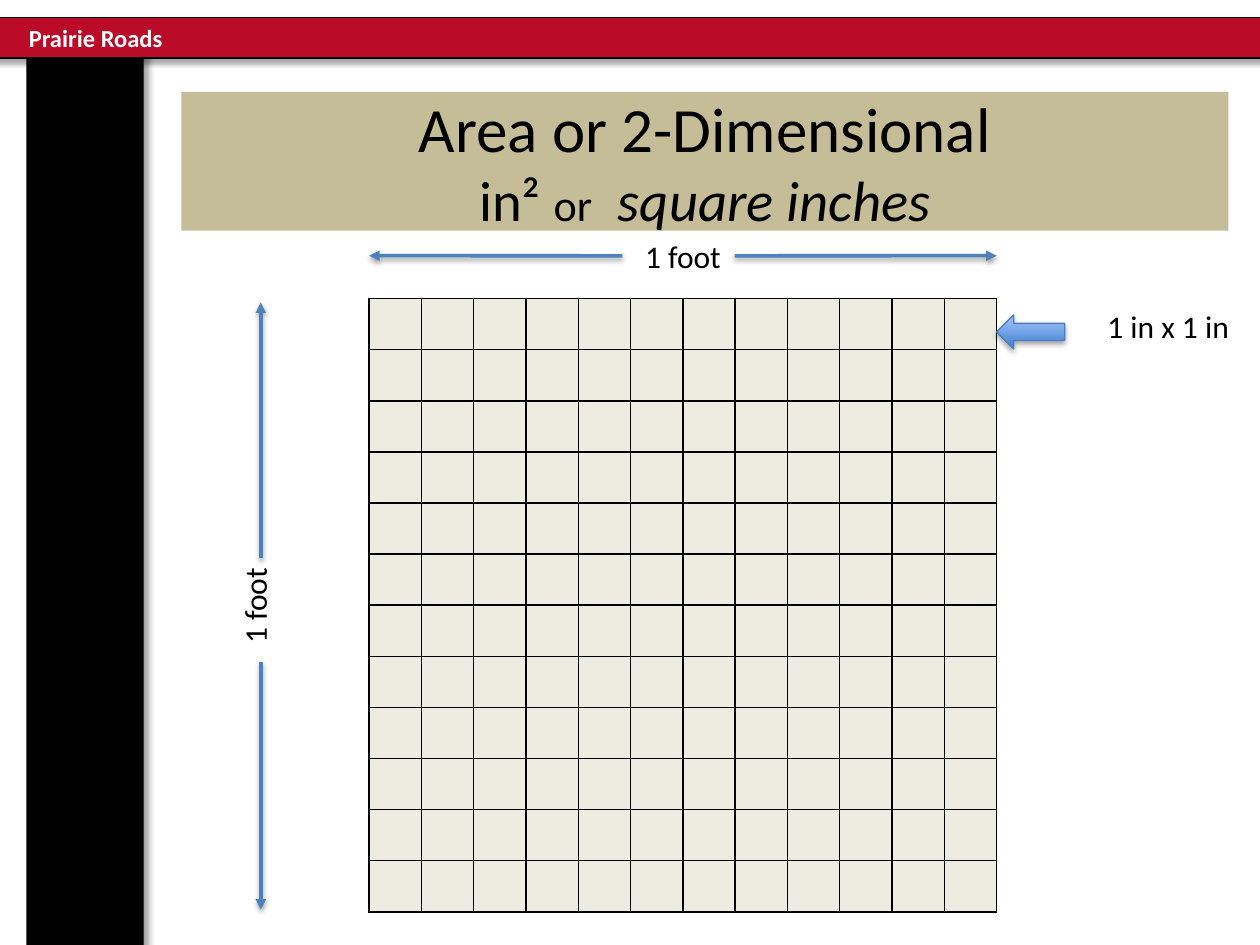
"""Build the slide showing one square foot as a grid of square inches."""
from dataclasses import dataclass

from lxml import etree
from pptx import Presentation
from pptx import util as u
from pptx.dml.color import RGBColor
from pptx.enum import shapes, text
from pptx.oxml import parse_xml
from pptx.oxml.ns import qn

COLORS = {
    "black": "000000", "white": "FFFFFF", "red": "BA0C28", "tan": "C4BD97",
    "cell": "EEECE1", "blue": "4F81BD", "edge": "4B7EBC",
    "dark": "3F80CE", "light": "A4C4FF",
}
NS = "http://schemas.openxmlformats.org/drawingml/2006/main"
WIDTH, HEIGHT = u.Inches(10), u.Inches(7.5)
INCHES_PER_FOOT = 12


@dataclass(frozen=True)
class Box:
    """Hold a frame in percent of the slide's width and height."""
    x: float
    y: float
    w: float
    h: float

    def emu(self) -> tuple:
        return across(self.x), down(self.y), across(self.w), down(self.h)


@dataclass(frozen=True)
class Shadow:
    """Hold an outer shadow: opacity percent, points and degrees."""
    alpha: float
    blur: float
    dist: float
    angle: float


@dataclass(frozen=True)
class Label:
    """Hold a text box and its formatting."""
    box: Box
    words: str
    fmt: dict
    align: text.PP_ALIGN = text.PP_ALIGN.LEFT
    wrap: bool = True
    vert: str = "horz"


@dataclass(frozen=True)
class Measure:
    """Hold an arrow from a point to a connection site of a label."""
    label: int
    x: float
    y: float
    site: int


def across(share: float) -> int:
    """Turn a percentage of the slide's width into a length."""
    return round(WIDTH * share / 100)


def down(share: float) -> int:
    """Turn a percentage of the slide's height into a length."""
    return round(HEIGHT * share / 100)


def rgb(name: str) -> RGBColor:
    """Look up a named colour."""
    return RGBColor.from_string(COLORS[name])


def set_font(r, fmt: dict, color: str = "black") -> None:
    """Apply format values to a run."""
    for key, value in {"name": "Calibri", **fmt}.items():
        setattr(r.font, key, value)
    r.font.color.rgb = rgb(color)


def set_shadow(sp, shadow: Shadow) -> None:
    """Give a shape or connector an outer shadow."""
    effects = etree.SubElement(sp._element.spPr, qn("a:effectLst"))
    outer = etree.SubElement(
        effects, qn("a:outerShdw"), blurRad=str(u.Pt(shadow.blur)),
        dist=str(u.Pt(shadow.dist)), dir=str(shadow.angle * 60000),
        rotWithShape="0")
    color = etree.SubElement(outer, qn("a:srgbClr"), val=COLORS["black"])
    etree.SubElement(color, qn("a:alpha"), val=str(shadow.alpha * 1000))


def add_block(s, kind, box: Box, fill: str, line: str, shadow: Shadow):
    """Draw a filled preset shape with an outline and a shadow."""
    sp = s.shapes.add_shape(kind, *box.emu())
    sp.fill.solid()
    sp.fill.fore_color.rgb = rgb(fill)
    if line:
        sp.line.color.rgb = rgb(line)
        sp.line.width = u.Pt(0.75)
    else:
        sp.line.fill.background()
    set_shadow(sp, shadow)
    return sp


def add_label(s, label: Label, color: str = "black"):
    """Draw a one-line text box."""
    sp = s.shapes.add_textbox(*label.box.emu())
    tf = sp.text_frame
    tf.word_wrap = label.wrap
    tf._txBody.bodyPr.set("vert", label.vert)
    p = tf.paragraphs[0]
    p.alignment = label.align
    r = p.add_run()
    r.text = label.words
    set_font(r, label.fmt, color)
    return sp


def add_title(s, box: Box, lines: list) -> None:
    """Fill the title placeholder with lines of formatted runs."""
    sp = s.shapes.title
    s.shapes._spTree.append(sp._element)
    sp.left, sp.top, sp.width, sp.height = box.emu()
    sp.fill.solid()
    sp.fill.fore_color.rgb = rgb("tan")
    tf = sp.text_frame
    frame = {"word_wrap": True, "auto_size": text.MSO_AUTO_SIZE.NONE,
             "vertical_anchor": text.MSO_ANCHOR.MIDDLE}
    for key, value in frame.items():
        setattr(tf, key, value)
    p = tf.paragraphs[0]
    p.alignment = text.PP_ALIGN.CENTER
    for i, runs in enumerate(lines):
        if i:
            p.add_line_break()
        for words, size, italic in runs:
            r = p.add_run()
            r.text = words
            set_font(r, {"size": u.Pt(size), "italic": italic})


def add_grid(s, box: Box, count: int) -> None:
    """Draw a square table of equal bordered cells."""
    table = s.shapes.add_table(count, count, *box.emu()).table
    table.first_row = table.horz_banding = False
    for col in table.columns:
        col.width = across(box.w / count)
    for row in table.rows:
        row.height = down(box.h / count)
    for cell in table.iter_cells():
        cell.fill.solid()
        cell.fill.fore_color.rgb = rgb("cell")
        for i, side in enumerate(("lnL", "lnR", "lnT", "lnB")):
            cell._tc.tcPr.insert(i, parse_xml(
                f'<a:{side} xmlns:a="{NS}" w="{u.Pt(1)}"><a:solidFill>'
                f'<a:srgbClr val="{COLORS["black"]}"/></a:solidFill></a:{side}>'))


def add_measure(s, measure: Measure, label) -> None:
    """Draw an arrow that ends on a side of its label."""
    x, y = across(measure.x), down(measure.y)
    line = s.shapes.add_connector(shapes.MSO_CONNECTOR.STRAIGHT, x, y, x, y)
    line.end_connect(label, measure.site)
    line.line.color.rgb = rgb("blue")
    line.line.width = u.Pt(2)
    etree.SubElement(line.line._get_or_add_ln(), qn("a:tailEnd"), type="triangle")
    set_shadow(line, Shadow(38, 3.1, 1.6, 90))


def main() -> None:
    """Compose and save the slide."""
    prs = Presentation()
    prs.slide_width, prs.slide_height = WIDTH, HEIGHT
    s = prs.slides.add_slide(prs.slide_layouts[5])
    kinds, below = shapes.MSO_SHAPE, Shadow(35, 3.1, 1.8, 90)
    add_block(s, kinds.RECTANGLE, Box(2.1, 4, 9.3, 97.87), "black", "",
              Shadow(40, 4, 3, 45))
    add_block(s, kinds.RECTANGLE, Box(-1.3, 1.87, 103.5, 4.27), "red", "black", below)
    add_label(s, Label(Box(1.3, 1.73, 14.2, 4.53), "Prairie Roads",
                       {"size": u.Pt(14), "bold": True}, wrap=False), "white")
    add_title(s, Box(14.4, 9.73, 83.1, 14.67), [
        [("Area or 2-Dimensional", 36, False)],
        [("in² ", 32.4, False), ("or", 25.2, False), ("  ", 32.4, False),
         ("square inches", 32.4, True)],
    ])
    add_grid(s, Box(29.3, 31.6, 49.8, 64), INCHES_PER_FOOT)

    body, center = {"size": u.Pt(18)}, text.PP_ALIGN.CENTER
    labels = [add_label(s, label) for label in (
        Label(Box(29.3, 24.4, 49.8, 5.33), "1 foot", body, center),
        Label(Box(18.2, 32, 5, 64.27), "1 foot", body, center, vert="vert270"),
        Label(Box(86.9, 31.87, 11.8, 5.33), "1 in x 1 in", body, wrap=False),
    )]
    for measure in (Measure(0, 58.3, 27.07, 3), Measure(0, 49.4, 27.07, 1),
                    Measure(1, 20.7, 59.07, 0), Measure(1, 20.7, 70, 2)):
        add_measure(s, measure, labels[measure.label])
    pointer = add_block(s, kinds.LEFT_ARROW, Box(79.1, 33.33, 5.4, 3.6),
                        "dark", "edge", below)
    pointer.fill.gradient()
    pointer.fill.gradient_angle = 90
    for stop, name in zip(pointer.fill.gradient_stops, ("dark", "light")):
        stop.color.rgb = rgb(name)
    prs.save("out.pptx")


if __name__ == "__main__":
    main()
